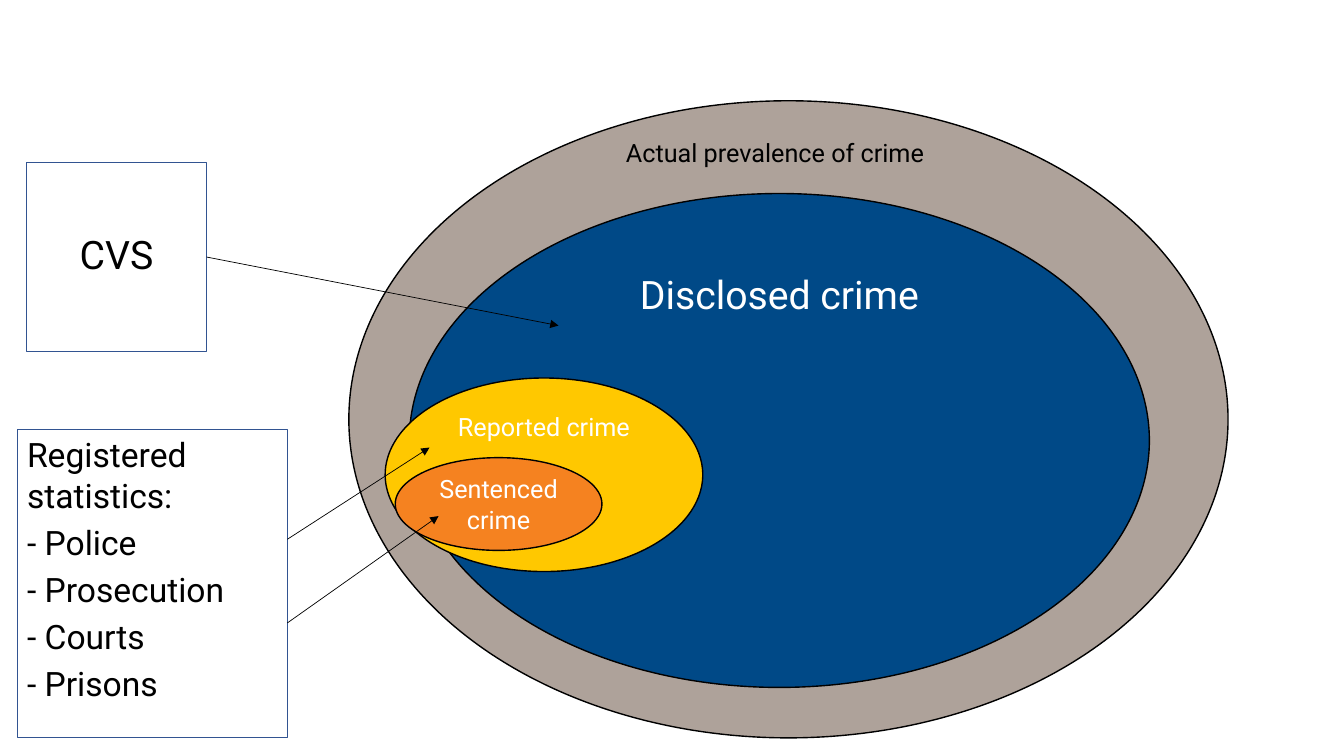
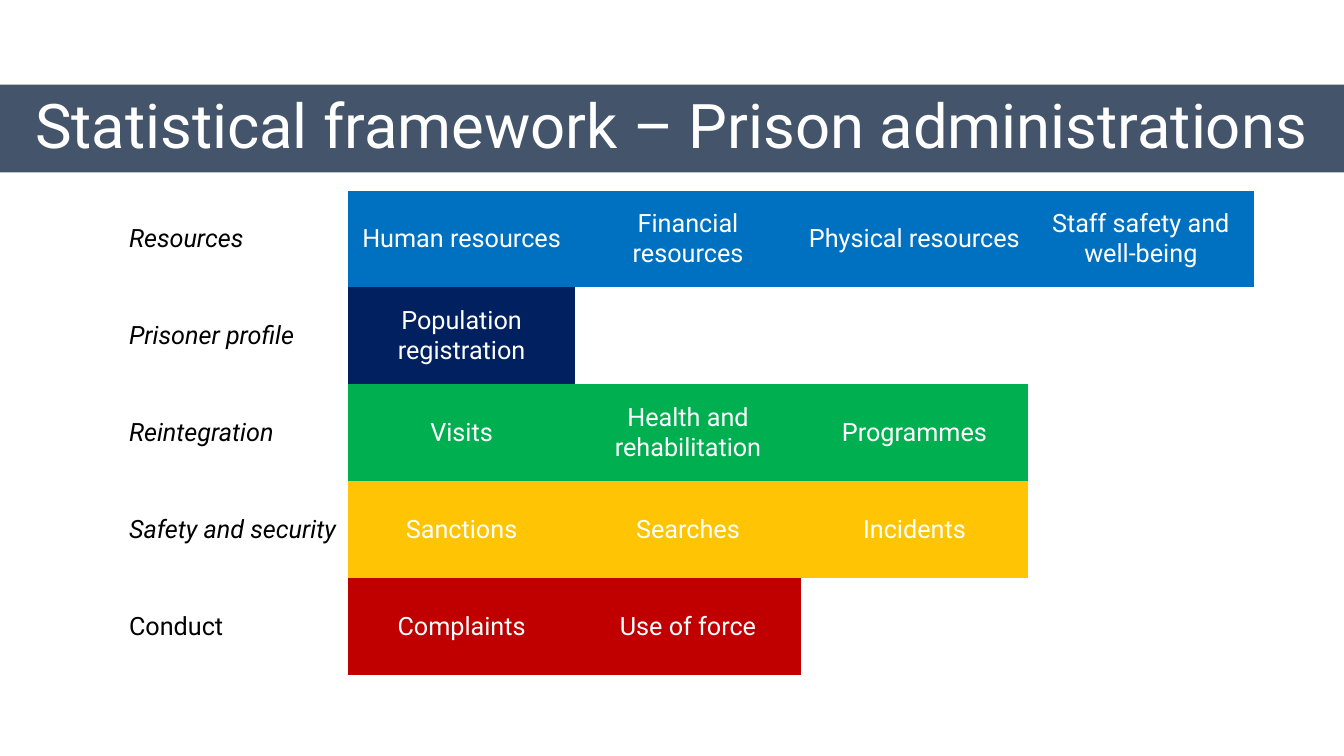
from lxml import etree
from pptx import Presentation
from pptx.dml.color import RGBColor
from pptx.enum.shapes import MSO_CONNECTOR, MSO_SHAPE
from pptx.enum.text import MSO_ANCHOR, PP_ALIGN
from pptx.oxml.ns import qn
from pptx.util import Inches, Pt

BLACK = RGBColor(0x00, 0x00, 0x00)
WHITE = RGBColor(0xFF, 0xFF, 0xFF)
TAUPE = RGBColor(0xAE, 0xA2, 0x9A)
OCEAN = RGBColor(0x00, 0x49, 0x87)
YELLOW = RGBColor(0xFF, 0xC8, 0x00)
ORANGE = RGBColor(0xF5, 0x82, 0x20)
FRAME = RGBColor(0x32, 0x54, 0x91)
SLATE = RGBColor(0x44, 0x54, 0x6A)
BLUE = RGBColor(0x00, 0x70, 0xC0)
NAVY = RGBColor(0x00, 0x20, 0x60)
GREEN = RGBColor(0x00, 0xB0, 0x50)
AMBER = RGBColor(0xFF, 0xC4, 0x04)
RED = RGBColor(0xC0, 0x00, 0x00)

PLAIN_TABLE_STYLE = "{2D5ABB26-0587-4C30-8999-92F81FD0307C}"


class Deck:
    font_name = "Roboto"
    body_size = 18

    def __init__(self):
        self.presentation = Presentation()
        self.presentation.slide_width = Inches(13.33)
        self.presentation.slide_height = Inches(7.5)
        self.slide = None

    def new_slide(self):
        layout = self.presentation.slide_layouts[6]
        self.slide = self.presentation.slides.add_slide(layout)

    def set_text(self, frame, text, color, size=body_size, align=PP_ALIGN.CENTER,
                 italic=False, spacing=None, gap=None):
        frame.text = text
        for index, paragraph in enumerate(frame.paragraphs):
            paragraph.alignment = align
            if spacing:
                paragraph.line_spacing = spacing
            if gap and index:
                paragraph.space_before = Pt(gap)
            for run in paragraph.runs:
                run.font.name = self.font_name
                run.font.size = Pt(size)
                run.font.italic = italic
                run.font.color.rgb = color

    def shape(self, kind, box, fill=None, line=None, line_width=1, text="",
              color=WHITE, anchor=MSO_ANCHOR.TOP, **style):
        shape = self.slide.shapes.add_shape(kind, *map(Inches, box))
        shape.shadow.inherit = False
        if fill is None:
            shape.fill.background()
        else:
            shape.fill.solid()
            shape.fill.fore_color.rgb = fill
        if line is None:
            shape.line.fill.background()
        else:
            shape.line.color.rgb = line
            shape.line.width = Pt(line_width)
        if text:
            shape.text_frame.word_wrap = True
            shape.text_frame.vertical_anchor = anchor
            self.set_text(shape.text_frame, text, color, **style)

    def ellipse(self, box, fill, **options):
        self.shape(MSO_SHAPE.OVAL, box, fill, BLACK, **options)

    def source_box(self, box, text, **options):
        self.shape(MSO_SHAPE.RECTANGLE, box, None, FRAME, 0.75,
                   text=text, color=BLACK, **options)

    def title_band(self, text):
        self.shape(MSO_SHAPE.RECTANGLE, (0, 0.84, 13.33, 0.87), SLATE, text=text,
                   anchor=MSO_ANCHOR.MIDDLE, size=44, spacing=0.9)

    def label(self, box, text):
        label = self.slide.shapes.add_textbox(*map(Inches, box))
        label.text_frame.word_wrap = True
        self.set_text(label.text_frame, text, BLACK, align=PP_ALIGN.LEFT)

    def arrow(self, start, end):
        arrow = self.slide.shapes.add_connector(
            MSO_CONNECTOR.STRAIGHT, *map(Inches, start + end))
        arrow.line.color.rgb = BLACK
        arrow.line.width = Pt(0.5)
        properties = arrow._element.spPr
        head = etree.SubElement(properties.find(qn("a:ln")), qn("a:tailEnd"))
        head.set("type", "triangle")
        etree.SubElement(properties, qn("a:effectLst"))

    def framework(self, box, rows):
        columns = 1 + max(len(topics) for _, _, _, topics in rows)
        table = self.slide.shapes.add_table(
            len(rows), columns, *map(Inches, box)).table
        table.first_row = table.horz_banding = False
        table._tbl.tblPr.find(qn("a:tableStyleId")).text = PLAIN_TABLE_STYLE
        for row, (area, italic, fill, topics) in enumerate(rows):
            for column in range(columns):
                cell = table.cell(row, column)
                cell.vertical_anchor = MSO_ANCHOR.MIDDLE
                cell.margin_left = cell.margin_right = Inches(0.07)
                cell.margin_top = cell.margin_bottom = 0
                if 1 <= column <= len(topics):
                    cell.fill.solid()
                    cell.fill.fore_color.rgb = fill
                    self.set_text(cell.text_frame, topics[column - 1], WHITE)
                else:
                    cell.fill.background()
            self.set_text(table.cell(row, 0).text_frame, area, BLACK,
                          align=PP_ALIGN.LEFT, italic=italic)


def crime_sources(deck):
    deck.new_slide()
    deck.ellipse((3.46, 1, 8.72, 6.32), TAUPE)
    deck.ellipse((4.06, 1.92, 7.34, 4.9), OCEAN, text="Disclosed crime", size=28)
    deck.ellipse((3.82, 3.75, 3.15, 1.92), YELLOW, text="Reported crime")
    deck.ellipse((3.92, 4.54, 2.05, 0.92), ORANGE, text="Sentenced crime",
                 anchor=MSO_ANCHOR.MIDDLE)
    deck.label((6.11, 1.31, 3.59, 0.4), "Actual prevalence of crime")
    deck.source_box((0.26, 1.61, 1.79, 1.88), "CVS", size=28, spacing=0.9,
                    anchor=MSO_ANCHOR.MIDDLE)
    registered = ("Registered statistics:", "- Police", "- Prosecution",
                  "- Courts", "- Prisons")
    deck.source_box((0.17, 4.26, 2.68, 3.06), "\n".join(registered), size=24,
                    align=PP_ALIGN.LEFT, gap=4.8)
    for start, end in (
        ((2.05, 2.55), (5.54, 3.23)),
        ((2.85, 5.35), (4.26, 4.44)),
        ((2.85, 6.18), (4.35, 5.12)),
    ):
        deck.arrow(start, end)


def prison_framework(deck):
    deck.new_slide()
    deck.title_band("Statistical framework – Prison administrations")
    deck.framework((1.21, 1.89, 11.23, 4.81), (
        ("Resources", True, BLUE,
         ("Human resources", "Financial resources", "Physical resources",
          "Staff safety and well-being")),
        ("Prisoner profile", True, NAVY, ("Population registration",)),
        ("Reintegration", True, GREEN,
         ("Visits", "Health and rehabilitation", "Programmes")),
        ("Safety and security", True, AMBER,
         ("Sanctions", "Searches", "Incidents")),
        ("Conduct", False, RED, ("Complaints", "Use of force")),
    ))


def main():
    deck = Deck()
    crime_sources(deck)
    prison_framework(deck)
    deck.presentation.save("out.pptx")


if __name__ == "__main__":
    main()
